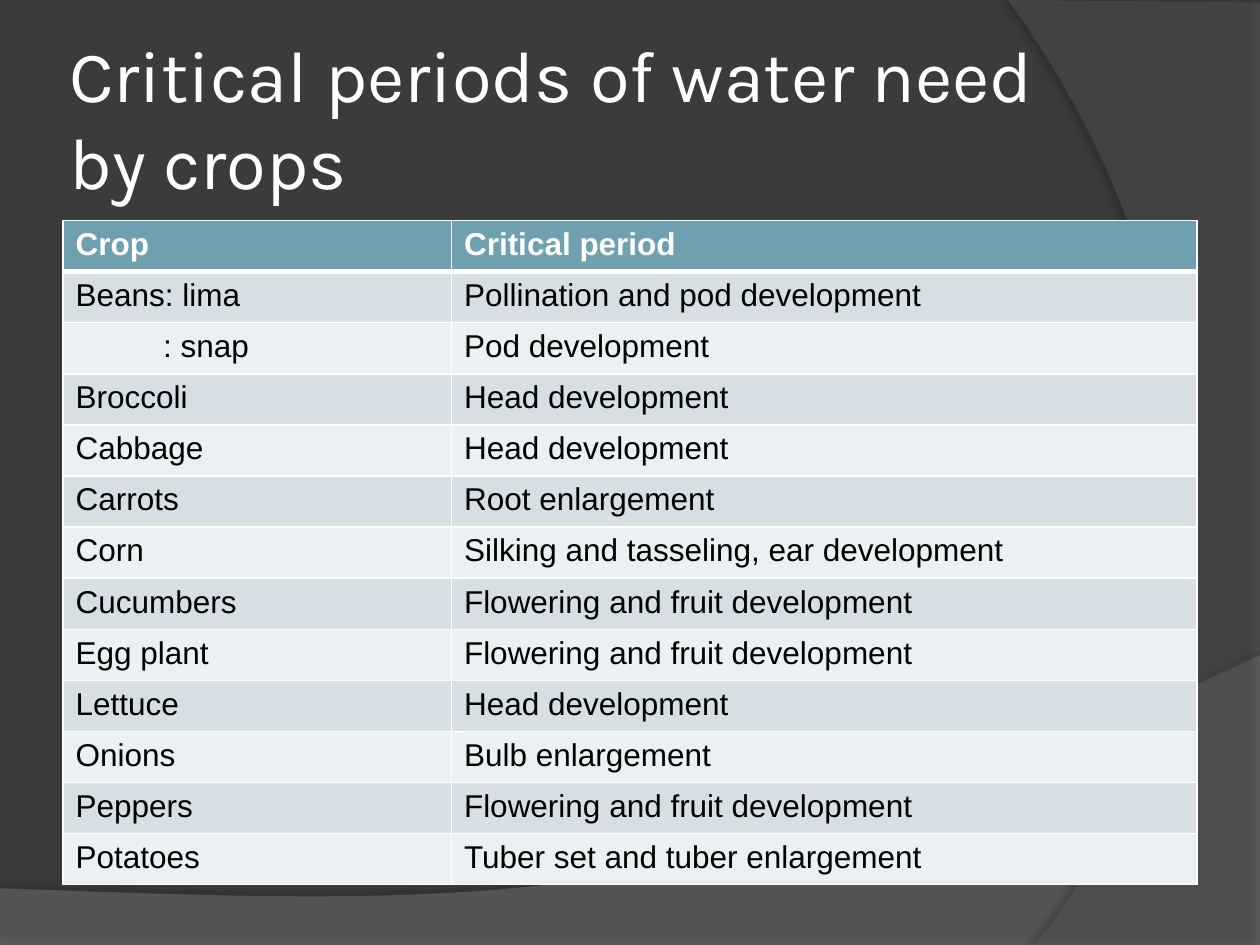
from lxml import etree
from pptx import Presentation
from pptx.dml.color import RGBColor
from pptx.enum import text
from pptx.oxml import ns, parse_xml
from pptx.util import Pt

DARK = RGBColor(0x3B, 0x3B, 0x3B)
GREY = RGBColor(0x7F, 0x7F, 0x7F)
SLATE = RGBColor(0x5E, 0x5E, 0x5E)
WHITE = RGBColor(0xFF, 0xFF, 0xFF)
BLACK = RGBColor(0, 0, 0)
TEAL = RGBColor(0x6E, 0xA0, 0xB0)
BANDS = [RGBColor(0xEB, 0xF0, 0xF2), RGBColor(0xD5, 0xDF, 0xE4)]

ROWS = [
    ("Crop", "Critical period"),
    ("Beans: lima", "Pollination and pod development"),
    (": snap", "Pod development"),
    ("Broccoli", "Head development"),
    ("Cabbage", "Head development"),
    ("Carrots", "Root enlargement"),
    ("Corn", "Silking and tasseling, ear development"),
    ("Cucumbers", "Flowering and fruit development"),
    ("Egg plant", "Flowering and fruit development"),
    ("Lettuce", "Head development"),
    ("Onions", "Bulb enlargement"),
    ("Peppers", "Flowering and fruit development"),
    ("Potatoes", "Tuber set and tuber enlargement"),
]


def curve(a, b, c, d, steps=40):
    """Points along the cubic Bezier curve from a to d."""
    pts = []
    for i in range(steps + 1):
        t = i / steps
        s = 1 - t
        pts.append(tuple(s**3 * p + 3 * s * s * t * q + 3 * s * t * t * r + t**3 * e
                         for p, q, r, e in zip(a, b, c, d)))
    return pts


def edge(cell, side, width):
    """Draw a white border on one side (L, R, T or B) of a cell."""
    line = parse_xml(
        f'<a:ln{side} {ns.nsdecls("a")} w="{Pt(width)}"><a:solidFill>'
        f'<a:srgbClr val="{WHITE}"/></a:solidFill></a:ln{side}>')
    props = cell._tc.get_or_add_tcPr()
    props.insert(len(props.findall(ns.qn("a:ln" + side[0]))) + "LRTB".index(side), line)


prs = Presentation()
prs.slide_width, prs.slide_height = Pt(720), Pt(540)
slide = prs.slides.add_slide(prs.slide_layouts[5])
slide.background.fill.solid()
slide.background.fill.fore_color.rgb = DARK

# Background waves, kept behind the title
wave = [(0, 540), (720, 540)] + curve((720, 374.4), (402.5, 524.9), (281.5, 517.7), (0, 507.6))
arc = [(720, 1.5), (720, 540)] + curve((591, 540), (673, 445.7), (733, 216), (576, 0))
waves = [(wave, GREY, 45, 35, 3.5, 270), (arc, SLATE, 40, 45, 4, 180)]
for i, (pts, color, alpha, dim, dist, angle) in enumerate(waves):
    pen = slide.shapes.build_freeform(Pt(pts[0][0]), Pt(pts[0][1]))
    pen.add_line_segments([(Pt(x), Pt(y)) for x, y in pts[1:]], close=True)
    shape = pen.convert_to_shape()
    shape.fill.solid()
    shape.fill.fore_color.rgb = color
    shape.line.fill.background()
    shape.shadow.inherit = False
    props = shape._element.spPr
    tint = props.find(".//" + ns.qn("a:srgbClr"))
    etree.SubElement(tint, ns.qn("a:alpha"), val=str(alpha * 1000))
    props.find(ns.qn("a:effectLst")).append(parse_xml(
        f'<a:outerShdw {ns.nsdecls("a")} blurRad="{Pt(4)}" dist="{Pt(dist)}" '
        f'dir="{angle * 60000}" rotWithShape="0"><a:srgbClr val="{BLACK}">'
        f'<a:alpha val="{dim * 1000}"/></a:srgbClr></a:outerShdw>'))
    slide.shapes._spTree.insert(2 + i, shape._element)

title = slide.shapes.title
place = {"left": 36, "top": 21.6, "width": 588, "height": 90}
for name, value in place.items():
    setattr(title, name, Pt(value))
frame = title.text_frame
frame.text = "Critical periods of water need by crops"
frame.word_wrap = True
frame.auto_size = text.MSO_AUTO_SIZE.NONE
frame.vertical_anchor = text.MSO_ANCHOR.MIDDLE
for side in ("left", "top", "right", "bottom"):
    setattr(frame, "margin_" + side, Pt(3.6))
para = frame.paragraphs[0]
para.alignment = text.PP_ALIGN.LEFT
for name, value in {"name": "Karla", "size": Pt(41.4)}.items():
    setattr(para.font, name, value)
para.font.color.rgb = WHITE

high = 29.2
table = slide.shapes.add_table(len(ROWS), 2, Pt(36), Pt(126), Pt(648), Pt(high * len(ROWS))).table
for col, width in zip(table.columns, (222, 426)):
    col.width = Pt(width)
for r, row in enumerate(ROWS):
    table.rows[r].height = Pt(high)
    head = r == 0
    for c, words in enumerate(row):
        cell = table.cell(r, c)
        cell.text = words
        cell.fill.solid()
        cell.fill.fore_color.rgb = TEAL if head else BANDS[r % 2]
        font = cell.text_frame.paragraphs[0].runs[0].font
        for name, value in {"name": "Arial", "size": Pt(18), "bold": head}.items():
            setattr(font, name, value)
        font.color.rgb = WHITE if head else BLACK
        for side in "LRTB":
            thick = (head and side == "B") or (r == 1 and side == "T")
            edge(cell, side, 3 if thick else 1)
        if words.startswith(":"):
            cell.margin_left = Pt(57.2)

prs.save("out.pptx")
